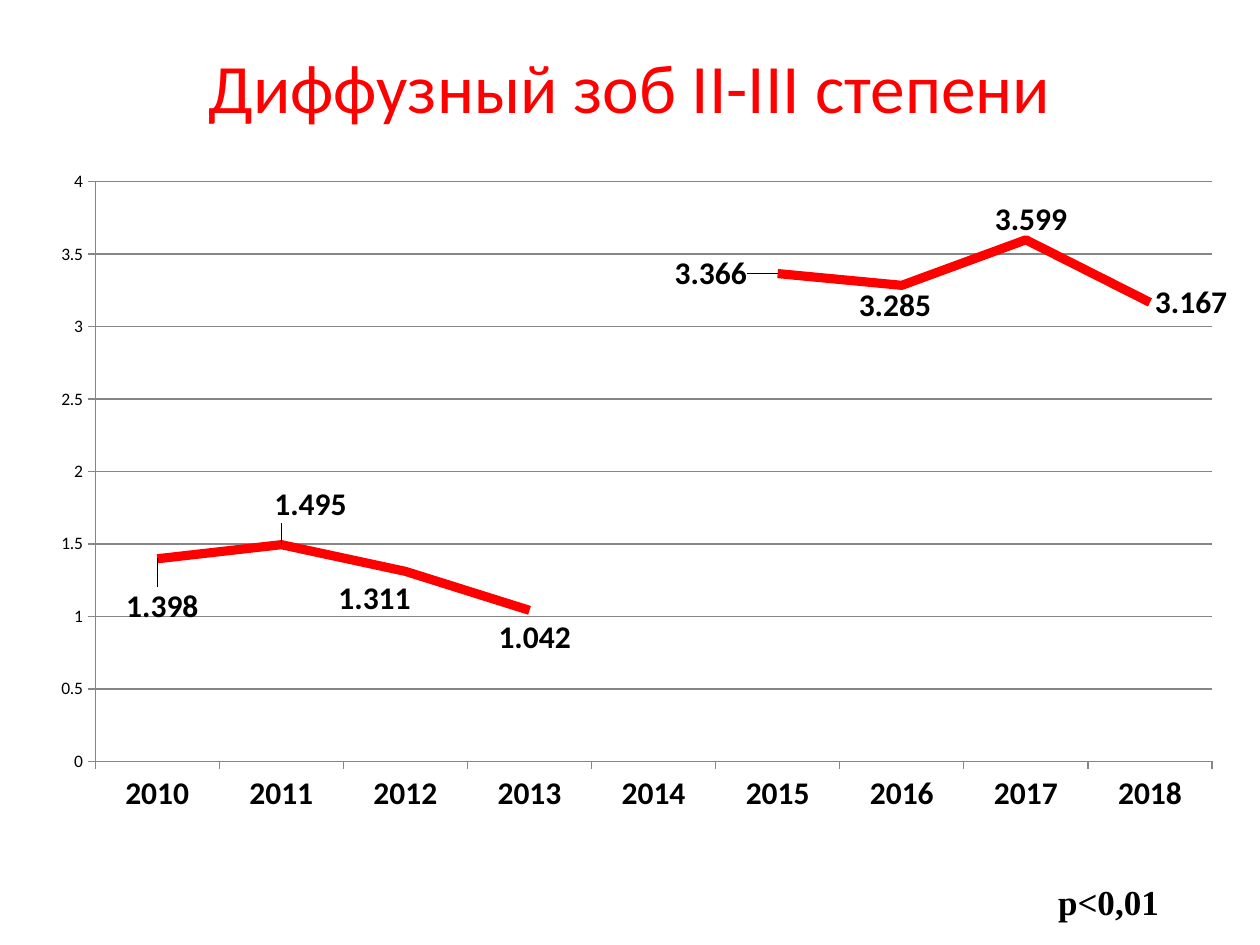
from dataclasses import dataclass
from typing import Optional

from lxml import etree
from pptx import Presentation
from pptx import util as u
from pptx.chart.data import CategoryChartData
from pptx.dml.color import RGBColor
from pptx.enum import chart as ch, text as tx
from pptx.oxml.ns import qn

RED, BLACK, GREY = "FF0000", "000000", "868686"


@dataclass
class Year:
    name: str
    rate: Optional[float]
    label_shift: Optional[tuple[float, float]] = None  # fractions of the chart


YEARS = [
    Year("2010", 1.398, (-0.03, 0.07)),
    Year("2011", 1.495, (-0.01, -0.06)),
    Year("2012", 1.311, (-0.06, 0.04)),
    Year("2013", 1.042, (-0.03, 0.04)),
    Year("2014", None),
    Year("2015", 3.366, (-0.09, 0)),
    Year("2016", 3.285, (-0.04, 0.03)),
    Year("2017", 3.599, (-0.03, -0.03)),
    Year("2018", 3.167),
]


@dataclass
class Caption:
    content: str
    left: float
    top: float
    width: float
    height: float
    size: float
    font: str
    color: str
    bold: bool = False
    centred: bool = False


CAPTIONS = [
    Caption("Диффузный зоб ІІ-ІІІ степени", 1.27, 0.76, 22.86, 1.96, 39.6,
            "Calibri", RED, centred=True),
    Caption("р<0,01", 21.08, 17.63, 2.57, 1.12, 20, "Times New Roman", BLACK, bold=True),
]


def rgb(code: str) -> RGBColor:
    return RGBColor.from_string(code)


def style_font(font, size: float, color: str, name: str = "Calibri", bold: bool = False) -> None:
    font.name, font.size, font.bold = name, u.Pt(size), bold
    font.color.rgb = rgb(color)


def add_caption(slide, caption: Caption) -> None:
    box = slide.shapes.add_textbox(u.Cm(caption.left), u.Cm(caption.top),
                                   u.Cm(caption.width), u.Cm(caption.height))
    frame = box.text_frame
    frame.word_wrap = caption.centred
    if caption.centred:
        frame.vertical_anchor = tx.MSO_ANCHOR.MIDDLE
    else:
        frame.auto_size = tx.MSO_AUTO_SIZE.SHAPE_TO_FIT_TEXT
    paragraph = frame.paragraphs[0]
    paragraph.text = caption.content
    paragraph.alignment = tx.PP_ALIGN.CENTER if caption.centred else tx.PP_ALIGN.LEFT
    style_font(paragraph.font, caption.size, caption.color, caption.font, caption.bold)


def manual_layout(**settings):
    layout = etree.Element(qn("c:layout"))
    manual = etree.SubElement(layout, qn("c:manualLayout"))
    for tag, value in settings.items():
        etree.SubElement(manual, qn(f"c:{tag}"), val=str(value))
    return layout


def style_axis(axis, size: float, bold: bool) -> None:
    style_font(axis.tick_labels.font, size, BLACK, bold=bold)
    axis.major_tick_mark = ch.XL_TICK_MARK.OUTSIDE
    axis.minor_tick_mark = ch.XL_TICK_MARK.NONE
    axis.format.line.color.rgb = rgb(GREY)


def add_rate_chart(slide) -> None:
    data = CategoryChartData(number_format="General")
    data.categories = [year.name for year in YEARS]
    data.add_series("Series 1", [year.rate for year in YEARS])
    chart = slide.shapes.add_chart(ch.XL_CHART_TYPE.LINE, u.Cm(0.71), u.Cm(3.12),
                                   u.Cm(24.21), u.Cm(13.59), data).chart
    chart.has_title = chart.has_legend = False
    style_font(chart.font, 10, BLACK)

    # Plot area
    plot_area = chart._chartSpace.chart.plotArea
    for layout in plot_area.findall(qn("c:layout")):
        plot_area.remove(layout)
    plot_area.insert(0, manual_layout(layoutTarget="inner", xMode="edge", yMode="edge",
                                      x=0.05, y=0.04, w=0.93, h=0.86))

    # Axes
    style_axis(chart.category_axis, 18, True)
    rates = chart.value_axis
    style_axis(rates, 10, False)
    rates.minimum_scale, rates.maximum_scale, rates.major_unit = 0, 4, 0.5
    rates.has_major_gridlines = True
    rates.major_gridlines.format.line.color.rgb = rgb(GREY)

    # Line and its labels
    plot = chart.plots[0]
    plot.vary_by_categories = False
    series = plot.series[0]
    series.smooth = False
    series.marker.style = ch.XL_MARKER_STYLE.NONE
    series.format.line.color.rgb = rgb(RED)
    series.format.line.width = u.Pt(5.25)
    labels = series.data_labels
    labels.show_value = True
    labels.position = ch.XL_LABEL_POSITION.RIGHT
    style_font(labels.font, 18, BLACK, bold=True)
    for index, year in enumerate(YEARS):
        if year.label_shift:
            label = series.points[index].data_label
            style_font(label.font, 18, BLACK, bold=True)
            label.position = ch.XL_LABEL_POSITION.RIGHT
            x, y = year.label_shift
            element = labels._element.xpath(f'c:dLbl[c:idx/@val="{index}"]')[0]
            element.insert(1, manual_layout(x=x, y=y))


def main() -> None:
    deck = Presentation()
    deck.slide_width, deck.slide_height = u.Cm(25.4), u.Cm(19.05)
    slide = deck.slides.add_slide(deck.slide_layouts[6])
    add_rate_chart(slide)
    for caption in CAPTIONS:
        add_caption(slide, caption)
    deck.save("out.pptx")


if __name__ == "__main__":
    main()
